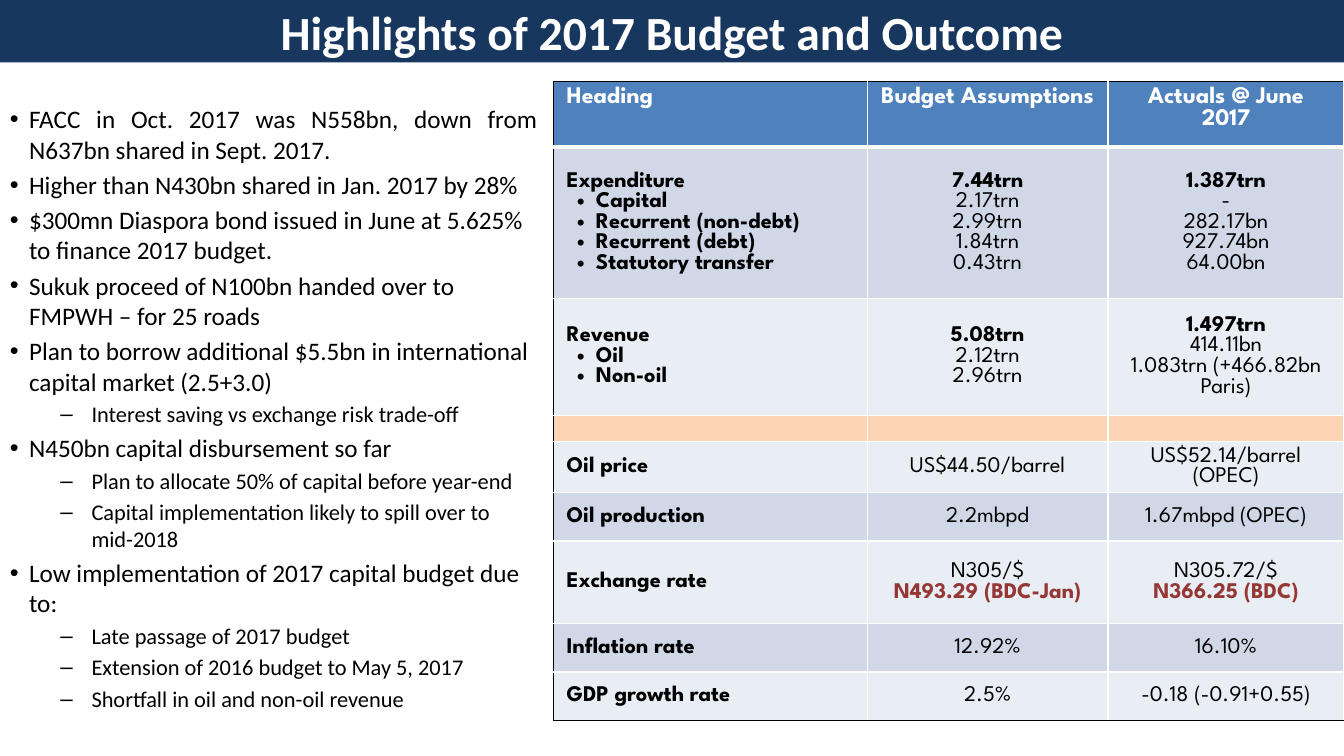
from dataclasses import dataclass

from lxml.etree import SubElement
from pptx import Presentation
from pptx.dml.color import RGBColor
from pptx.enum.text import MSO_ANCHOR, MSO_AUTO_SIZE, PP_ALIGN
from pptx.oxml.ns import qn
from pptx.util import Inches, Pt


@dataclass(frozen=True)
class Theme:
    body_font: str = "Calibri"
    table_font: str = "League Spartan"
    title_size: int = 34
    bullet_size: int = 18
    sub_size: int = 16
    head_size: int = 17
    cell_size: int = 16
    gap_size: int = 8
    navy: str = "17375E"
    blue: str = "4F81BD"
    band: str = "D0D8E8"
    pale: str = "E9EDF4"
    peach: str = "FCD5B5"
    red: str = "953735"
    black: str = "000000"
    white: str = "FFFFFF"


T = Theme()
WIDTH, HEIGHT = Inches(13.33), Inches(7.5)

# Bullets: (level, text)
BULLETS = [
    (0, "FACC in Oct. 2017 was N558bn, down from N637bn shared in Sept. 2017."),
    (0, "Higher than N430bn shared in Jan. 2017 by 28%"),
    (0, "$300mn Diaspora bond issued in June at 5.625% to finance 2017 budget."),
    (0, "Sukuk proceed of N100bn handed over to FMPWH – for 25 roads"),
    (0, "Plan to borrow additional $5.5bn in international capital market (2.5+3.0)"),
    (1, "Interest saving vs exchange risk trade-off"),
    (0, "N450bn capital disbursement so far"),
    (1, "Plan to allocate 50% of capital before year-end"),
    (1, "Capital implementation likely to spill over to mid-2018"),
    (0, "Low implementation of 2017 capital budget due to:"),
    (1, "Late passage of 2017 budget"),
    (1, "Extension of 2016 budget to May 5, 2017"),
    (1, "Shortfall in oil and non-oil revenue"),
]
JUSTIFIED = 2  # leading bullets set justified

# Table: column shares of the width; rows of (kind, share of height, fill, cells)
COLUMNS = [23.33, 17.93, 17.55]
ROWS = [
    ("head", 8.67, T.blue,
     [["Heading"], ["Budget Assumptions"], ["Actuals @ June 2017"]]),
    ("group", 20, T.band,
     [["Expenditure", "Capital", "Recurrent (non-debt)", "Recurrent (debt)",
       "Statutory transfer"],
      ["7.44trn", "2.17trn", "2.99trn", "1.84trn", "0.43trn"],
      ["1.387trn", "-", "282.17bn", "927.74bn", "64.00bn"]]),
    ("group", 15.47, T.pale,
     [["Revenue", "Oil", "Non-oil"],
      ["5.08trn", "2.12trn", "2.96trn"],
      ["1.497trn", "414.11bn", "1.083trn (+466.82bn Paris)"]]),
    ("gap", 3.47, T.peach, [[], [], []]),
    ("item", 6.4, T.pale,
     [["Oil price"], ["US$44.50/barrel"], ["US$52.14/barrel (OPEC)"]]),
    ("item", 6.4, T.band,
     [["Oil production"], ["2.2mbpd"], ["1.67mbpd (OPEC)"]]),
    ("item", 10.93, T.pale,
     [["Exchange rate"], ["N305/$", "N493.29 (BDC-Jan)"],
      ["N305.72/$", "N366.25 (BDC)"]]),
    ("item", 6.4, T.band, [["Inflation rate"], ["12.92%"], ["16.10%"]]),
    ("item", 6.4, T.pale,
     [["GDP growth rate"], ["2.5%"], ["-0.18 (-0.91+0.55)"]]),
]


def across(share):
    return int(WIDTH * share / 100)


def down(share):
    return int(HEIGHT * share / 100)


def paint(fill, color):
    fill.solid()
    fill.fore_color.rgb = RGBColor.from_string(color)


def write(tf, index, text, size, font, color=T.black, bold=False,
          align=PP_ALIGN.LEFT, before=0.0, bullet=None, indent=None):
    """Put one paragraph of text into a frame."""
    p = tf.add_paragraph() if index else tf.paragraphs[0]
    p.alignment = align
    p.space_before = Pt(before)
    if indent:
        left, hang = indent
        props = p._p.get_or_add_pPr()
        props.set("marL", str(Inches(left)))
        props.set("indent", str(-Inches(hang)))
        if bullet:
            SubElement(props, qn("a:buFont")).set("typeface", "Arial")
            SubElement(props, qn("a:buChar")).set("char", bullet)
    r = p.add_run()
    r.text = text
    f = r.font
    f.size, f.name, f.bold = Pt(size), font, bold
    f.color.rgb = RGBColor.from_string(color)


def add_title(s, text):
    sp = s.shapes.title
    sp.left, sp.top, sp.width, sp.height = 0, 0, WIDTH, down(8.27)
    paint(sp.fill, T.navy)
    tf = sp.text_frame
    tf.auto_size = MSO_AUTO_SIZE.NONE
    tf.vertical_anchor = MSO_ANCHOR.MIDDLE
    write(tf, 0, text, T.title_size, T.body_font, color=T.white, bold=True,
          align=PP_ALIGN.CENTER)


def add_bullets(s):
    sp = s.shapes.add_textbox(0, down(13.07), across(40.74), down(78.13))
    tf = sp.text_frame
    tf.word_wrap = True
    for i, (level, text) in enumerate(BULLETS):
        size = T.sub_size if level else T.bullet_size
        write(tf, i, text, size, T.body_font, before=size * 0.2,
              align=PP_ALIGN.JUSTIFY if i < JUSTIFIED else PP_ALIGN.LEFT,
              bullet="–" if level else "•",
              indent=(0.81, 0.31) if level else (0.19, 0.19))


def set_borders(cell, sides):
    """Draw the sides given as {tag: (colour, points)}."""
    props = cell._tc.get_or_add_tcPr()
    for tag, (color, points) in sides.items():
        ln = SubElement(props, qn(f"a:{tag}"), w=str(Pt(points)))
        solid = SubElement(ln, qn("a:solidFill"))
        SubElement(solid, qn("a:srgbClr"), val=color)


def fill_cell(cell, kind, col, lines):
    tf = cell.text_frame
    for i, text in enumerate(lines):
        entry = kind == "group" and col == 0 and i > 0
        alert = kind == "item" and i > 0
        total = kind == "group" and i == 0
        head = kind == "head"
        write(tf, i, text, T.head_size if head else T.cell_size, T.table_font,
              color=T.white if head else T.red if alert else T.black,
              bold=head or col == 0 or total or alert,
              align=PP_ALIGN.CENTER if col else PP_ALIGN.LEFT,
              bullet="•" if entry else None,
              indent=(0.29, 0.19) if entry else None)
    if not lines:  # keeps the spacer row thin
        SubElement(tf.paragraphs[0]._p, qn("a:endParaRPr"),
                   sz=str(T.gap_size * 100))


def add_budget_table(s):
    frame = s.shapes.add_table(
        len(ROWS), len(COLUMNS), across(41.19), down(10.8),
        across(sum(COLUMNS)), down(sum(row[1] for row in ROWS)))
    table = frame.table
    for column, share in zip(table.columns, COLUMNS):
        column.width = across(share)
    last = len(ROWS) - 1
    for i, (kind, share, color, cells) in enumerate(ROWS):
        table.rows[i].height = down(share)
        for j, lines in enumerate(cells):
            cell = table.cell(i, j)
            cell.margin_left = cell.margin_right = Inches(0.13)
            cell.margin_top = cell.margin_bottom = Inches(0.05)
            cell.vertical_anchor = (
                MSO_ANCHOR.TOP if kind == "head" else MSO_ANCHOR.MIDDLE)
            set_borders(cell, {
                "lnL": (T.white if j else T.black, 1),
                "lnR": (T.white, 1),
                "lnT": (T.white, 3 if i == 1 else 1) if i else (T.black, 1),
                "lnB": (T.black if i == last else T.white, 1 if i else 3),
            })
            paint(cell.fill, color)
            fill_cell(cell, kind, j, lines)


def main():
    prs = Presentation()
    prs.slide_width, prs.slide_height = WIDTH, HEIGHT
    s = prs.slides.add_slide(prs.slide_layouts[5])
    add_title(s, "Highlights of 2017 Budget and Outcome")
    add_budget_table(s)
    add_bullets(s)
    prs.save("out.pptx")


if __name__ == "__main__":
    main()
